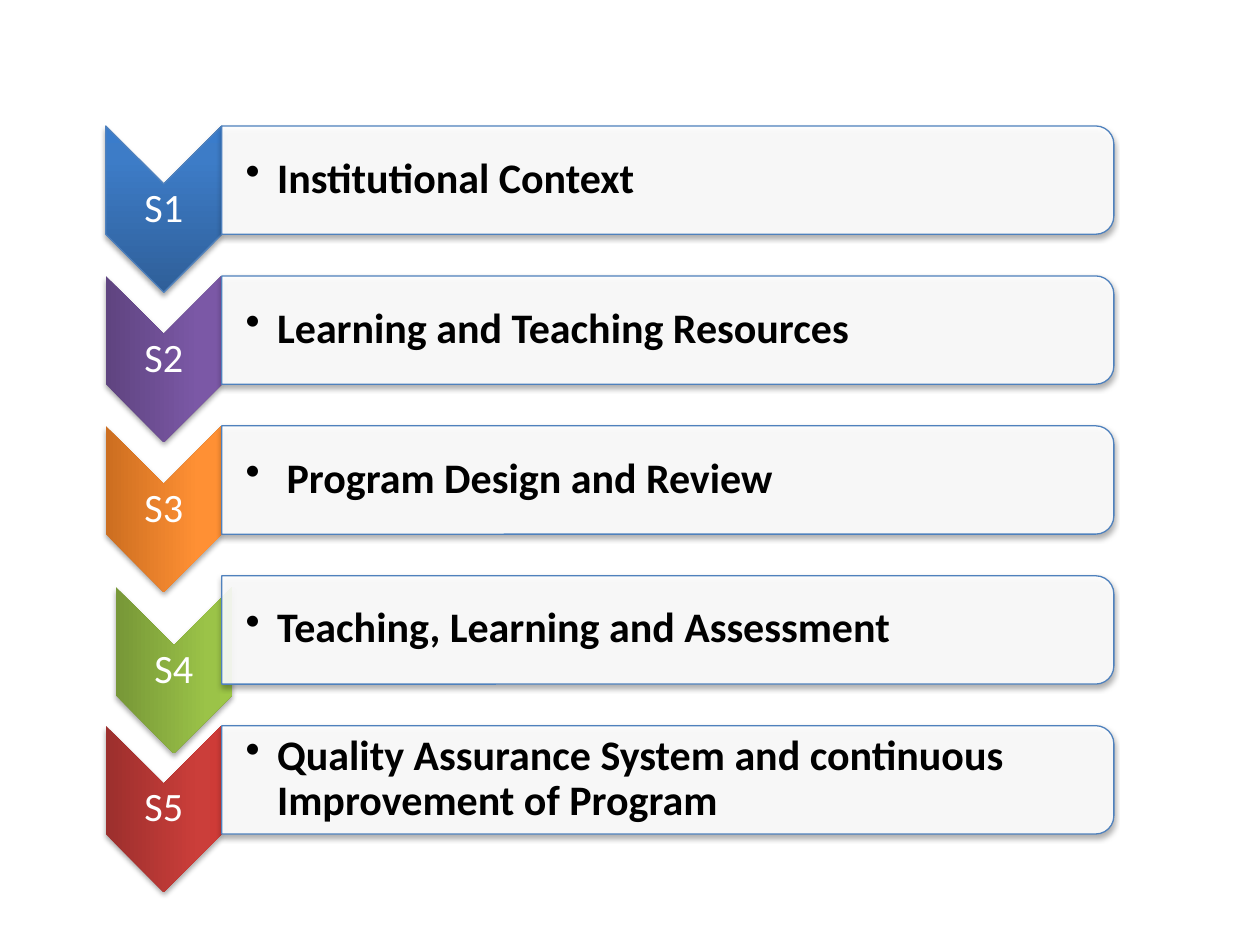
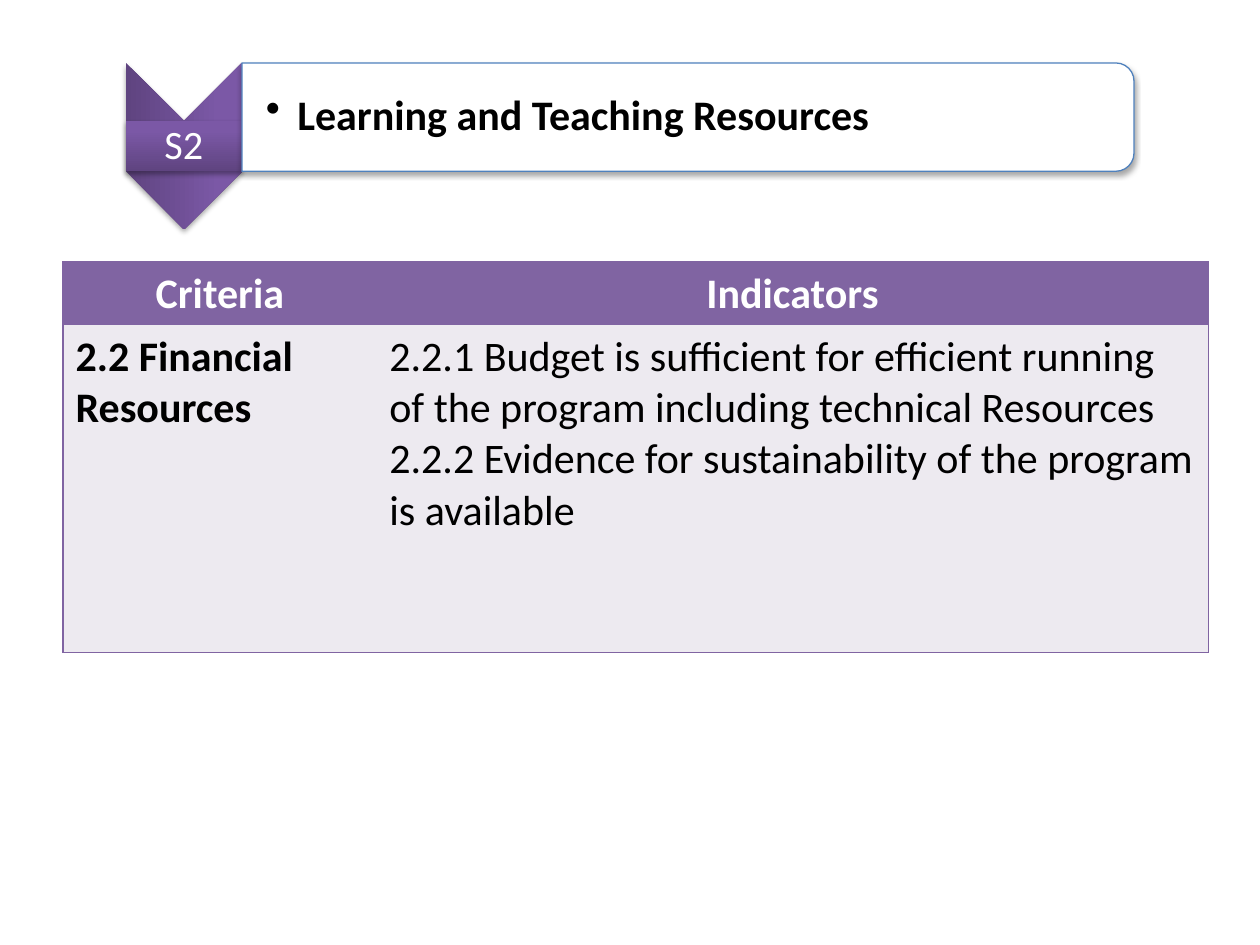
import pptx
import pptx.dml.color
import pptx.enum.shapes
import pptx.enum.text
import pptx.oxml
import pptx.oxml.ns
import pptx.util

Inches = pptx.util.Inches
SHAPE = pptx.enum.shapes.MSO_SHAPE
CENTER = pptx.enum.text.PP_ALIGN.CENTER
LEFT = pptx.enum.text.PP_ALIGN.LEFT

FONT = "Calibri"
COLORS = {
    "white": "FFFFFF", "black": "000000", "outline": "4F81BD",
    "table": "8064A2", "table_body": "EDEAF0",
}
# Gradient stops at 0, 80 and 100 percent
GRADIENTS = {
    "blue": ("2F5F99", "3D7CC7", "3A7CCB"),
    "purple": ("5F4480", "7B58A6", "7C57A8"),
    "orange": ("CC6E20", "FF9034", "FF9136"),
    "green": ("779737", "9BC348", "9DC746"),
    "red": ("9C2F2D", "CB3E3A", "CE3B37"),
}
STANDARDS = [
    ("S1", "Institutional Context", "blue"),
    ("S2", "Learning and Teaching Resources", "purple"),
    ("S3", " Program Design and Review", "orange"),
    ("S4", "Teaching, Learning and Assessment", "green"),
    ("S5", "Quality Assurance System and continuous Improvement of Program", "red"),
]
CHEVRON_WIDTH, CHEVRON_HEIGHT = 0.92, 1.32
BAR_WIDTH, BAR_HEIGHT = 7.08, 0.86
ROW_PITCH = 1.19
PLAIN_TABLE_STYLE = "{2D5ABB26-0587-4C30-8999-92F81FD0307C}"


def rgb(name):
    return pptx.dml.color.RGBColor.from_string(COLORS[name])


def make_xml(text):
    """Parse an XML string whose first tag is in the drawing namespace."""
    tag, rest = text[:-2].split(" ", 1) if text.endswith("/>") and text.count("<") == 1 else (None, None)
    if tag:
        return pptx.oxml.parse_xml(f'{tag} {pptx.oxml.ns.nsdecls("a")} {rest}/>')
    head, rest = text.split(" ", 1)
    return pptx.oxml.parse_xml(f'{head} {pptx.oxml.ns.nsdecls("a")} {rest}')


def find(element, tag):
    return element.find(pptx.oxml.ns.qn(tag))


def add_shadow(shape):
    shape.shadow.inherit = False
    find(shape._element.spPr, "a:effectLst").append(make_xml(
        '<a:outerShdw blurRad="39370" dist="22860" dir="5400000" rotWithShape="0">'
        '<a:srgbClr val="000000"><a:alpha val="35000"/></a:srgbClr></a:outerShdw>'))


def fill_gradient(shape, gradient, turns_with_shape=True):
    stops = "".join(
        f'<a:gs pos="{position}000"><a:srgbClr val="{color}"/></a:gs>'
        for position, color in zip((0, 80, 100), GRADIENTS[gradient]))
    find(shape._element.spPr, "a:prstGeom").addnext(make_xml(
        f'<a:gradFill rotWithShape="{int(turns_with_shape)}"><a:gsLst>{stops}</a:gsLst>'
        '<a:lin ang="16200000" scaled="0"/></a:gradFill>'))


def set_outline(shape, color=None):
    if color:
        shape.line.color.rgb = rgb(color)
        shape.line.width = pptx.util.Pt(0.75)
    else:
        shape.line.fill.background()


def add_turned_shape(page, kind, left, top, width, height):
    """Add a shape turned by 90 degrees that covers the given area once turned."""
    shift = (width - height) / 2
    shape = page.shapes.add_shape(kind, Inches(left + shift), Inches(top - shift),
                                  Inches(height), Inches(width))
    shape.rotation = 90
    return shape


def format_paragraph(para, size, color, bold=False, align=LEFT):
    para.alignment = align
    for span in para.runs:
        span.font.name = FONT
        span.font.size = pptx.util.Pt(size)
        span.font.bold = bold
        span.font.color.rgb = rgb(color)


def write_label(box, text, size, color, left_inset=0.02, **style):
    frame = box.text_frame
    frame.word_wrap = True
    frame.vertical_anchor = pptx.enum.text.MSO_ANCHOR.MIDDLE
    frame.margin_left = Inches(left_inset)
    frame.margin_right = frame.margin_top = frame.margin_bottom = Inches(0.02)
    frame.text = text
    para = frame.paragraphs[0]
    para.line_spacing = 0.9
    format_paragraph(para, size, color, **style)
    return para


def add_chevron(page, code, gradient, left, top, label_band=False):
    first = code == "S1"
    chevron = add_turned_shape(page, SHAPE.CHEVRON, left, top, CHEVRON_WIDTH, CHEVRON_HEIGHT)
    fill_gradient(chevron, gradient, turns_with_shape=not first)
    set_outline(chevron, "outline" if first else None)
    add_shadow(chevron)

    area = [Inches(n) for n in (left, top + CHEVRON_WIDTH / 2, CHEVRON_WIDTH, 0.4)]
    if label_band:
        label = page.shapes.add_shape(SHAPE.RECTANGLE, *area)
        fill_gradient(label, gradient)
        set_outline(label)
        add_shadow(label)
    else:
        label = page.shapes.add_textbox(*area)
    write_label(label, code, 23, "white", align=CENTER)


def add_bar(page, text, left, top, opacity):
    bar = add_turned_shape(page, SHAPE.ROUND_2_SAME_RECTANGLE, left, top, BAR_WIDTH, BAR_HEIGHT)
    bar.fill.solid()
    bar.fill.fore_color.rgb = rgb("white")
    if opacity < 100:
        color = find(find(bar._element.spPr, "a:solidFill"), "a:srgbClr")
        color.append(make_xml(f'<a:alpha val="{opacity}000"/>'))
    set_outline(bar, "outline")
    add_shadow(bar)

    label = page.shapes.add_textbox(Inches(left), Inches(top + 0.04), Inches(7.04), Inches(0.77))
    para = write_label(label, text, 24, "black", left_inset=0.19, bold=True)
    properties = para._p.get_or_add_pPr()
    properties.set("marL", str(Inches(0.25)))
    properties.set("indent", str(Inches(-0.25)))
    properties.append(make_xml('<a:buChar char="•"/>'))


def add_standard(page, standard, left, top, chevron_shift=(0, 0), label_band=False, opacity=90):
    code, text, gradient = standard
    add_chevron(page, code, gradient, left + chevron_shift[0], top + chevron_shift[1], label_band)
    add_bar(page, text, left + CHEVRON_WIDTH, top, opacity)


def set_borders(cell, sides):
    properties = cell._tc.get_or_add_tcPr()
    for index, side in enumerate(sides):
        properties.insert(index, make_xml(
            f'<a:ln{side} w="12700"><a:solidFill><a:srgbClr val="{COLORS["table"]}"/>'
            f'</a:solidFill></a:ln{side}>'))


def add_criteria_table(page, rows):
    frame = page.shapes.add_table(len(rows), 2, Inches(0.5), Inches(2.08), Inches(9.09), Inches(3.1))
    table = frame.table
    table.first_row = table.horz_banding = False
    find(table._tbl.tblPr, "a:tableStyleId").text = PLAIN_TABLE_STYLE
    for column, width in zip(table.columns, (2.49, 6.6)):
        column.width = Inches(width)
    for row, height in zip(table.rows, (0.5, 2.6)):
        row.height = Inches(height)

    for row_index, texts in enumerate(rows):
        header = row_index == 0
        for column_index, text in enumerate(texts):
            cell = table.cell(row_index, column_index)
            cell.text = text
            cell.fill.solid()
            cell.fill.fore_color.rgb = rgb("table" if header else "table_body")
            set_borders(cell, ("L" if column_index == 0 else "R", "T" if header else "B"))
            for para in cell.text_frame.paragraphs:
                format_paragraph(para, 24, "white" if header else "black",
                                 bold=header or column_index == 0,
                                 align=CENTER if header else LEFT)


def build_overview(page):
    for index, standard in enumerate(STANDARDS):
        shift = (0.08, 0.09) if standard[0] == "S4" else (0, 0)
        add_standard(page, standard, 0.84, 1 + index * ROW_PITCH, chevron_shift=shift)


def build_resources(page):
    add_standard(page, STANDARDS[1], 1, 0.5, label_band=True, opacity=100)
    add_criteria_table(page, [
        ("Criteria", "Indicators"),
        ("2.2 Financial Resources",
         "2.2.1 Budget is sufficient for efficient running of the program "
         "including technical Resources\n"
         "2.2.2 Evidence for sustainability of the program is available"),
    ])


def main():
    deck = pptx.Presentation()
    deck.slide_width, deck.slide_height = Inches(10), Inches(7.5)
    for build in (build_overview, build_resources):
        build(deck.slides.add_slide(deck.slide_layouts[6]))
    deck.save("out.pptx")


if __name__ == "__main__":
    main()
